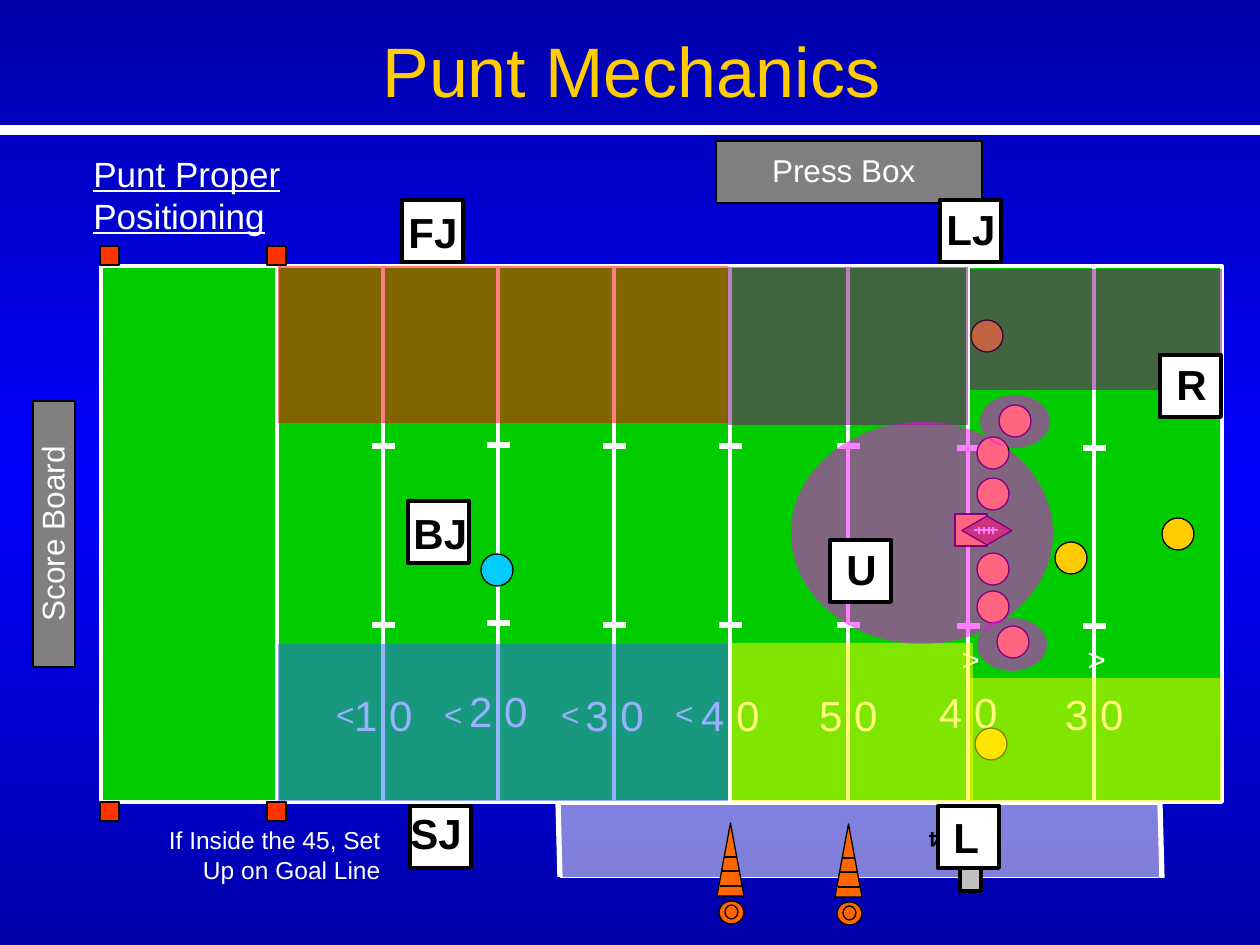
from copy import deepcopy

from pptx import Presentation
from pptx import util as u
from pptx.dml.color import RGBColor
from pptx.enum import dml, shapes, text
from pptx.oxml.ns import qn
from pptx.oxml.xmlchemy import OxmlElement

PX = u.Inches(1) / 126
WHITE = RGBColor(0xFF, 0xFF, 0xFF)
BLACK = RGBColor(0, 0, 0)
GRAY = RGBColor(0x80, 0x80, 0x80)
SILVER = RGBColor(0xC0, 0xC0, 0xC0)
GRASS = RGBColor(0, 0xCC, 0)
PYLON = RGBColor(0xFF, 0x33, 0)
CONE = RGBColor(0xFF, 0x66, 0)
GOLD = RGBColor(0xFF, 0xCC, 0)
LEATHER = RGBColor(0x99, 0x66, 0)
SKY = RGBColor(0, 0xCC, 0xFF)
YELLOW = RGBColor(0xFF, 0xFF, 0)
BLUE = RGBColor(0x33, 0x66, 0xFF)
RED = RGBColor(0xFF, 0, 0)
PURPLE = RGBColor(0x80, 0, 0x80)
MAGENTA = RGBColor(0xFF, 0, 0xFF)
NAVY = RGBColor(0, 0, 0xAA)
BRIGHT_BLUE = RGBColor(0, 0, 0xFF)

RECT = shapes.MSO_SHAPE.RECTANGLE
OVAL = shapes.MSO_SHAPE.OVAL
TRIANGLE = shapes.MSO_SHAPE.ISOSCELES_TRIANGLE
DIAMOND = shapes.MSO_SHAPE.FLOWCHART_DECISION
LEFT, RIGHT = text.PP_ALIGN.LEFT, text.PP_ALIGN.RIGHT

presentation = Presentation()
presentation.slide_width, presentation.slide_height = u.Inches(10), u.Inches(7.5)
slide = presentation.slides.add_slide(presentation.slide_layouts[6])


def add_item(kind, left, top, width, height, fill=None, line=BLACK, weight=0.75,
             alpha=None, rotation=0, words="", size=18, color=WHITE, align=RIGHT,
             bold=False, wrap=True):
    """Add a preset shape, or a text box when kind is None."""
    box = [round(n * PX) for n in (left, top, width, height)]
    if kind is None:
        shape = slide.shapes.add_textbox(*box)
        shape.text_frame.word_wrap = wrap
        paragraph = shape.text_frame.paragraphs[0]
        paragraph.text = words
        paragraph.alignment = align
        font = paragraph.font
        font.name, font.size, font.bold = "Arial", u.Pt(size), bold
        font.color.rgb = color
    else:
        shape = slide.shapes.add_shape(kind, *box)
        shape.shadow.inherit = False
        if fill is None:
            shape.fill.background()
        else:
            shape.fill.solid()
            shape.fill.fore_color.rgb = fill
        if alpha is not None:
            tint = OxmlElement("a:alpha")
            tint.set("val", str(alpha * 1000))
            shape.fill._xPr.find(".//" + qn("a:srgbClr")).append(tint)
        if line is None:
            shape.line.fill.background()
        else:
            shape.line.color.rgb = line
            shape.line.width = u.Pt(weight)
    shape.rotation = rotation
    return shape


def add_line(x1, y1, x2, y2, color=WHITE, weight=2.25):
    ends = [round(n * PX) for n in (x1, y1, x2, y2)]
    connector = slide.shapes.add_connector(shapes.MSO_CONNECTOR.STRAIGHT, *ends)
    connector.line.color.rgb = color
    connector.line.width = u.Pt(weight)
    connector._element.spPr.append(OxmlElement("a:effectLst"))


# Background gradient
background = slide.background.fill
background.gradient()
background.gradient_angle = 270
stop_list = slide.element.find(".//" + qn("a:gsLst"))
stop_list.insert(1, deepcopy(stop_list[0]))
for stop, position, color in zip(background.gradient_stops, (0, 0.5, 1),
                                 (NAVY, BRIGHT_BLUE, NAVY)):
    stop.position = position
    stop.color.rgb = color

# Heading
add_line(0, 130, 1260, 130, weight=6)
add_item(None, 370, 21, 775, 97, words="Punt Mechanics", size=40, color=GOLD, align=LEFT)
subtitle = add_item(None, 81, 146, 393, 160, words="Punt Proper\vPositioning",
                    size=20, align=LEFT)
subtitle.text_frame.paragraphs[0].font.underline = True

# Press box and score board
add_item(RECT, 818, 39, 62, 266, GRAY, rotation=270)
add_item(None, 759, 145, 169, 50, words="Press Box", wrap=False)
add_item(RECT, 33, 401, 42, 266, GRAY)
add_item(None, -48, 509, 200, 50, words="Score Board", rotation=270)

# Field, goal line and pylons
add_item(RECT, 101, 266, 1121, 536, GRASS, WHITE, 2.25)
add_line(277, 266, 277, 801)
for left in (100, 267):
    for top in (246, 802):
        add_item(RECT, left, top, 19, 19, PYLON)

# Team area beside the field
add_line(558, 801, 560, 877, weight=3)
add_line(1160, 804, 1162, 878, weight=3)
team_area = add_item(RECT, 560, 804, 599, 73, WHITE, WHITE, 0.25, alpha=50)
team_area.line.dash_style = dml.MSO_LINE.ROUND_DOT

# Yard lines: x, line top, hash rows, number, number top
yard_lines = [
    (383, 266, (446, 625), "1 0", 683),
    (498, 266, (445, 623), "2 0", 679),
    (614, 266, (446, 625), "3 0", 683),
    (730, 268, (446, 625), "4 0", 683),
    (848, 268, (446, 625), "5 0", 683),
    (968, 268, (448, 626), "4 0", 680),
    (1094, 268, (448, 626), "3 0", 682),
]
for x, top, hash_rows, number, number_top in yard_lines:
    add_line(x, top, x, top + 536)
    for y in hash_rows:
        add_line(x - 11, y, x + 12, y, weight=3)
    add_item(None, x - 54, number_top, 96, 63, words=number, size=24)

# Direction marks beside the numbers
for left, top, rotation in [(323, 689, 0), (431, 689, 0), (548, 689, 0), (662, 688, 0),
                            (949, 638, 180), (1075, 638, 180)]:
    add_item(None, left, top, 44, 50, rotation=rotation, words="<", wrap=False)

# Cones
for x, top in [(849, 824), (731, 823)]:
    add_item(TRIANGLE, x - 14, top, 27, 73, CONE)
    add_item(OVAL, x - 12, top + 78, 25, 23, CONE)
    for drop, half in [(34, 6), (48, 9), (63, 11)]:
        add_line(x - half, top + drop, x + half, top + drop, BLACK, 0.75)
    add_item(OVAL, x - 6, top + 82, 13, 14)

# Down marker
add_item(RECT, 960, 864, 21, 27, SILVER, weight=2.25)
add_item(None, 916, 822, 37, 38, rotation=180, words="4", size=12, color=BLACK,
         align=LEFT, bold=True, wrap=False)

# Players
add_item(RECT, 955, 514, 32, 32, GOLD)
for left, top in [(977, 478), (977, 437), (977, 553), (977, 591), (1162, 518), (975, 728),
                  (997, 626), (971, 320), (999, 405), (1055, 542)]:
    add_item(OVAL, left, top, 32, 32, GOLD)
add_item(OVAL, 481, 554, 32, 32, SKY)

# Ball with laces
add_item(DIAMOND, 962, 516, 50, 29, LEATHER)
add_line(974, 530, 998, 530, weight=0.75)
for x in (979, 984, 989, 993):
    add_line(x, 527, x, 534, weight=0.75)

# Zones of responsibility
zones = [
    (RECT, 731, 643, 242, 158, YELLOW),
    (RECT, 969, 678, 252, 124, YELLOW),
    (RECT, 278, 644, 450, 157, BLUE),
    (RECT, 278, 266, 450, 157, RED),
    (RECT, 728, 267, 240, 158, PURPLE),
    (RECT, 970, 269, 252, 121, PURPLE),
    (OVAL, 791, 422, 262, 222, MAGENTA),
    (OVAL, 980, 395, 70, 53, MAGENTA),
    (OVAL, 977, 618, 70, 53, MAGENTA),
]
for zone in zones:
    add_item(*zone, line=None, alpha=50)

# Officials: label, box left and top, text left, top and width
officials = [
    ("BJ", 408, 501, 401, 501, 83),
    ("FJ", 402, 200, 396, 200, 84),
    ("SJ", 410, 806, 398, 801, 84),
    ("LJ", 940, 200, 934, 197, 96),
    ("L", 938, 806, 941, 805, 73),
    ("R", 1160, 355, 1164, 352, 43),
    ("U", 830, 540, 834, 537, 43),
]
for label, left, top, text_left, text_top, text_width in officials:
    add_item(RECT, left, top, 61, 62, WHITE, weight=2.25)
    add_item(None, text_left, text_top, text_width, 63, words=label, size=24,
             color=BLACK, align=LEFT, bold=True)

# Note
add_item(None, 151, 819, 242, 72, words="If Inside the 45, Set Up on Goal Line", size=14)

presentation.save("out.pptx")
